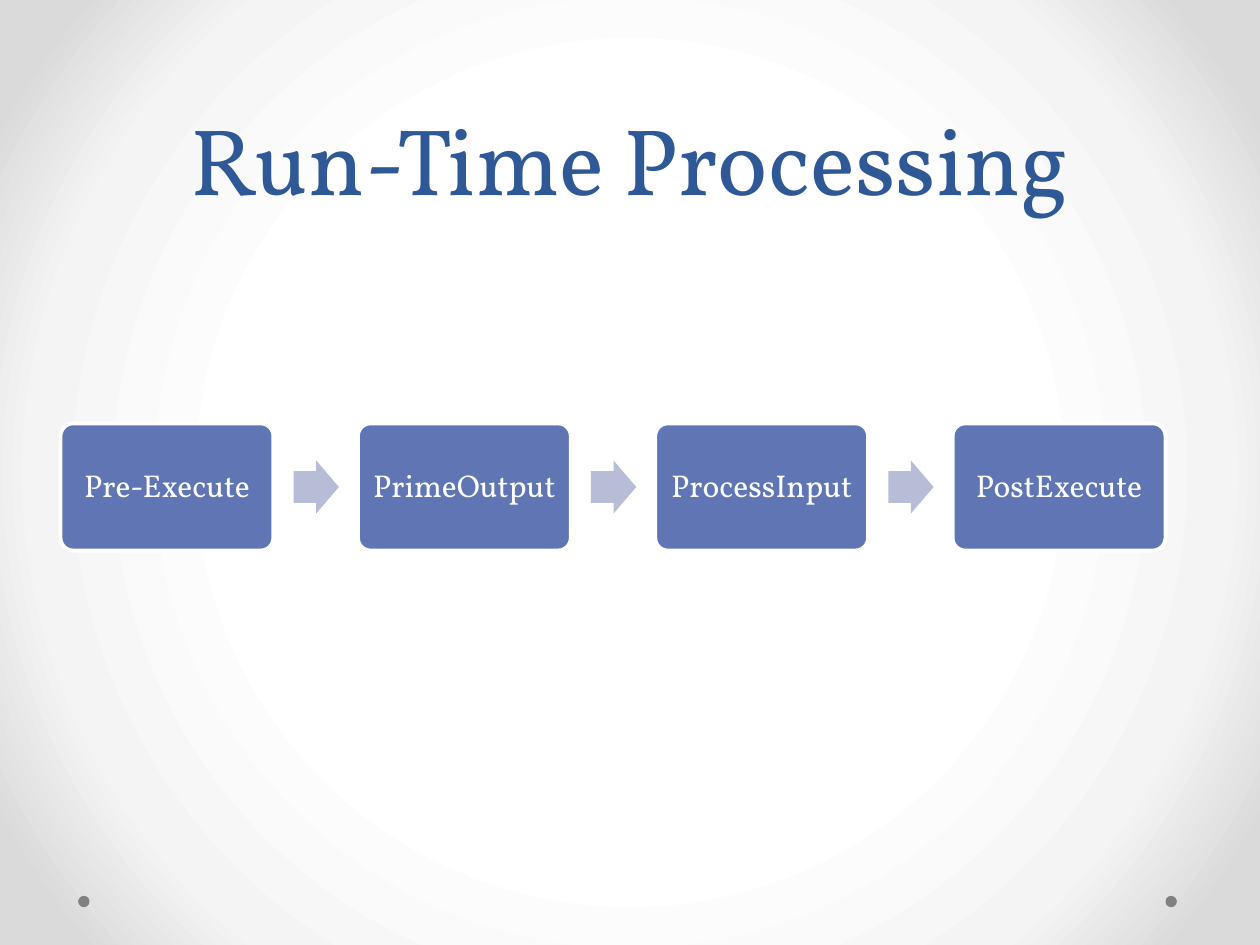
from pptx import Presentation
from pptx.dml.color import RGBColor
from pptx.enum.shapes import MSO_SHAPE
from pptx.enum.text import MSO_ANCHOR, PP_ALIGN
from pptx.oxml import parse_xml
from pptx.oxml.ns import nsdecls, qn
from pptx.util import Inches, Pt

STEPS = ["Pre-Execute", "PrimeOutput", "ProcessInput", "PostExecute"]
STEP_LEFT, STEP_TOP, STEP_W, STEP_H, PITCH = 0.48, 3.36, 1.69, 1.01, 2.36
ARROW_W, ARROW_H, ARROW_OFFSET = 0.36, 0.42, 1.85


def color(value):
    """Turn a hex string into a colour."""
    return RGBColor.from_string(value)


def set_background(slide, stops):
    """Fill the background with a circular gradient from the centre."""
    slide.background.fill.gradient()
    old = slide._element.find(".//" + qn("a:gradFill"))
    marks = "".join(
        f'<a:gs pos="{pos * 1000}"><a:srgbClr val="{value}"/></a:gs>'
        for pos, value in stops
    )
    new = parse_xml(
        f'<a:gradFill {nsdecls("a")} rotWithShape="1"><a:gsLst>{marks}</a:gsLst>'
        '<a:path path="circle"><a:fillToRect l="50000" t="50000" r="50000" b="50000"/>'
        "</a:path></a:gradFill>"
    )
    old.getparent().replace(old, new)


def write_text(sp, text, size, fill, anchor=MSO_ANCHOR.MIDDLE, spacing=0.9):
    """Write one centred paragraph into a shape."""
    tf = sp.text_frame
    tf.word_wrap = True
    tf.vertical_anchor = anchor
    p = tf.paragraphs[0]
    p.alignment = PP_ALIGN.CENTER
    p.line_spacing = spacing
    r = p.add_run()
    r.text = text
    r.font.name = "Vollkorn"
    r.font.size = Pt(size)
    r.font.color.rgb = color(fill)


def add_shape(slide, kind, left, top, width, height, fill, line=None, adjust=()):
    """Add a flat preset shape."""
    sp = slide.shapes.add_shape(
        kind, Inches(left), Inches(top), Inches(width), Inches(height)
    )
    sp.shadow.inherit = False
    sp.fill.solid()
    sp.fill.fore_color.rgb = color(fill)
    if line:
        sp.line.color.rgb = color(line)
        sp.line.width = Pt(2.25)
    else:
        sp.line.fill.background()
    for i, value in enumerate(adjust):
        sp.adjustments[i] = value
    return sp


def add_title(slide, text):
    """Add the slide title."""
    sp = slide.shapes.add_textbox(Inches(0.5), Inches(0), Inches(9), Inches(1.75))
    write_text(sp, text, 54, "2F5897", anchor=MSO_ANCHOR.BOTTOM, spacing=Pt(58))


def add_step(slide, left, text):
    """Add one rounded process step."""
    sp = add_shape(slide, MSO_SHAPE.ROUNDED_RECTANGLE, left, STEP_TOP, STEP_W, STEP_H,
                   "6076B4", line="FFFFFF", adjust=[0.1])
    tf = sp.text_frame
    tf.margin_left = tf.margin_right = Inches(0.05)
    tf.margin_top = tf.margin_bottom = Inches(0.1)
    write_text(sp, text, 18, "FFFFFF")


def add_arrow(slide, left):
    """Add a block arrow centred on the row of steps."""
    top = STEP_TOP + (STEP_H - ARROW_H) / 2
    add_shape(slide, MSO_SHAPE.RIGHT_ARROW, left, top, ARROW_W, ARROW_H,
              "B7BDD6", adjust=[0.6, 0.5])


def main():
    """Build and save the slide."""
    prs = Presentation()
    prs.slide_width, prs.slide_height = Inches(10), Inches(7.5)
    slide = prs.slides.add_slide(prs.slide_layouts[6])
    set_background(slide, [(50, "FFFFFF"), (76, "F4F4F4"), (92, "DADADA")])
    for left in (9.25, 0.62):
        add_shape(slide, MSO_SHAPE.OVAL, left, 7.11, 0.09, 0.09, "808080")
    add_title(slide, "Run-Time Processing")
    for i, text in enumerate(STEPS):
        left = STEP_LEFT + i * PITCH
        add_step(slide, left, text)
        if i < len(STEPS) - 1:
            add_arrow(slide, left + ARROW_OFFSET)
    prs.save("out.pptx")


if __name__ == "__main__":
    main()
